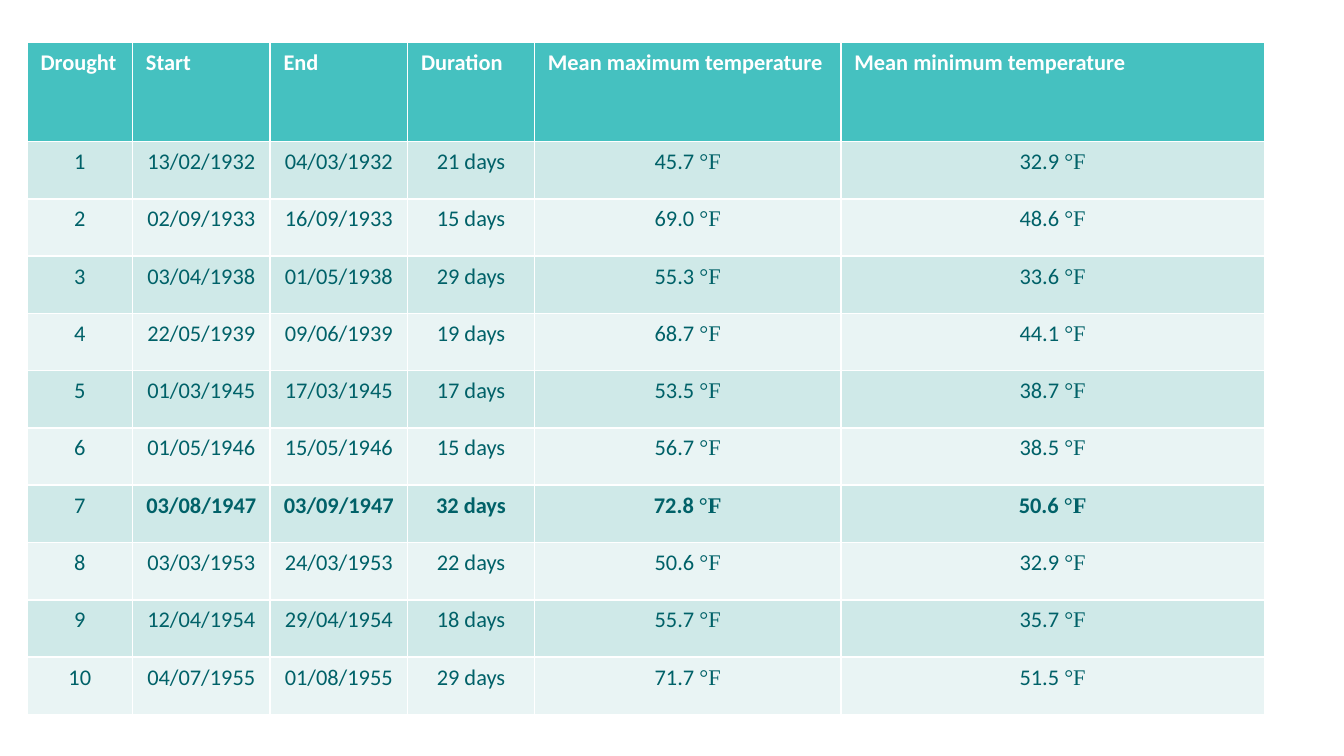
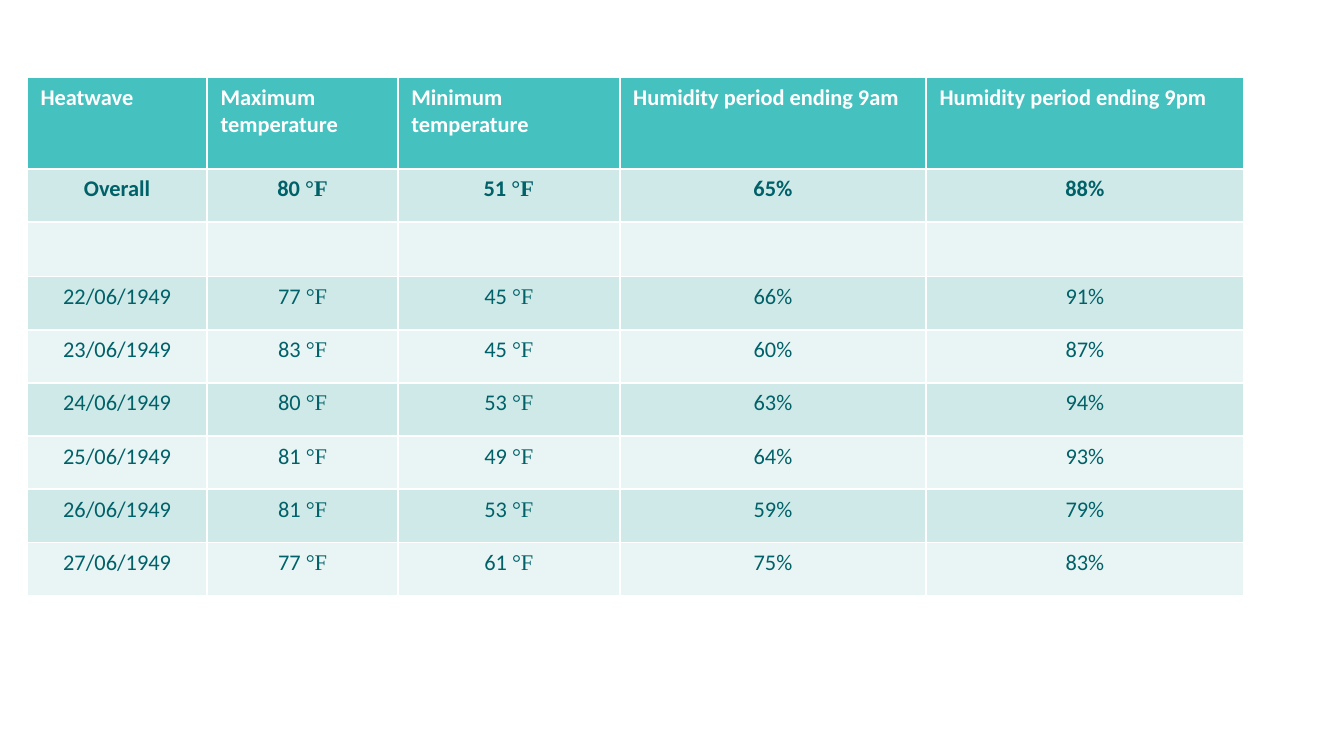
from dataclasses import dataclass

from pptx import Presentation
from pptx.dml.color import RGBColor as Color
from pptx.enum.text import PP_ALIGN as Align
from pptx.util import Pt


@dataclass(frozen=True)
class Theme:
    header: Color = Color.from_string("45C1C0")
    bands: tuple = (Color.from_string("CFE9E8"), Color.from_string("E9F4F4"))
    header_text: Color = Color.from_string("FFFFFF")
    body_text: Color = Color.from_string("006168")
    font: str = "Calibri"
    unit_font: str = "Times New Roman"
    size: int = 12


THEME = Theme()
PAGE_SIZE = (720, 405)
TABLE_LEFT = 14.5
UNIT = "°F"

DROUGHT_HEADS = ("Drought", "Start", "End", "Duration",
                 "Mean maximum temperature", "Mean minimum temperature")
DROUGHT_WIDTHS = (56.5, 73.7, 73.7, 68, 164.2, 226.8)
# start, end, days, mean maximum, mean minimum
DROUGHTS = (
    ("13/02/1932", "04/03/1932", 21, 45.7, 32.9),
    ("02/09/1933", "16/09/1933", 15, 69.0, 48.6),
    ("03/04/1938", "01/05/1938", 29, 55.3, 33.6),
    ("22/05/1939", "09/06/1939", 19, 68.7, 44.1),
    ("01/03/1945", "17/03/1945", 17, 53.5, 38.7),
    ("01/05/1946", "15/05/1946", 15, 56.7, 38.5),
    ("03/08/1947", "03/09/1947", 32, 72.8, 50.6),
    ("03/03/1953", "24/03/1953", 22, 50.6, 32.9),
    ("12/04/1954", "29/04/1954", 18, 55.7, 35.7),
    ("04/07/1955", "01/08/1955", 29, 71.7, 51.5),
)

HEATWAVE_HEADS = ("Heatwave", "Maximum temperature", "Minimum temperature",
                  "Humidity period ending 9am", "Humidity period ending 9pm")
HEATWAVE_WIDTHS = (96.5, 102.2, 118.8, 164.2, 170)
# label, maximum, minimum, humidity at 9am, humidity at 9pm
HEATWAVE_OVERALL = ("Overall", 80, 51, 65, 88)
HEATWAVE_DAYS = (
    ("22/06/1949", 77, 45, 66, 91),
    ("23/06/1949", 83, 45, 60, 87),
    ("24/06/1949", 80, 53, 63, 94),
    ("25/06/1949", 81, 49, 64, 93),
    ("26/06/1949", 81, 53, 59, 79),
    ("27/06/1949", 77, 61, 75, 83),
)


def drought_rows():
    return [(str(number), start, end, f"{days} days",
             f"{high:.1f} {UNIT}", f"{low:.1f} {UNIT}")
            for number, (start, end, days, high, low) in enumerate(DROUGHTS, 1)]


def heatwave_row(label, high, low, morning, evening):
    return (label, f"{high} {UNIT}", f"{low} {UNIT}",
            f"{morning}%", f"{evening}%")


def add_span(para, text, font, color, bold):
    span = para.add_run()
    span.text = text
    span.font.name = font
    span.font.size = Pt(THEME.size)
    span.font.color.rgb = color
    span.font.bold = bold


def fill_cell(cell, text, fill, color, bold, align=None):
    """Paint a cell and write its text, with the unit in its own font."""
    cell.fill.solid()
    cell.fill.fore_color.rgb = fill
    para = cell.text_frame.paragraphs[0]
    para.alignment = align
    value = text.removesuffix(UNIT)
    if value:
        add_span(para, value, THEME.font, color, bold)
    if value != text:
        add_span(para, UNIT, THEME.unit_font, color, bold)


def add_data_table(page, top, widths, heads, rows, header_height, row_height,
                   is_bold):
    """Add a banded table; is_bold(row, column) picks the bold body cells."""
    height = header_height + row_height * len(rows)
    table = page.shapes.add_table(len(rows) + 1, len(heads), Pt(TABLE_LEFT),
                                  Pt(top), Pt(sum(widths)), Pt(height)).table
    for column, width in zip(table.columns, widths):
        column.width = Pt(width)
    for row in table.rows:
        row.height = Pt(row_height)
    table.rows[0].height = Pt(header_height)

    for c, head in enumerate(heads):
        fill_cell(table.cell(0, c), head, THEME.header, THEME.header_text, True)
    for r, row in enumerate(rows):
        for c, text in enumerate(row):
            fill_cell(table.cell(r + 1, c), text, THEME.bands[r % 2],
                      THEME.body_text, is_bold(r, c), Align.CENTER)


def main():
    deck = Presentation()
    deck.slide_width, deck.slide_height = map(Pt, PAGE_SIZE)
    blank = deck.slide_layouts[6]

    longest = max(range(len(DROUGHTS)), key=lambda r: DROUGHTS[r][2])
    add_data_table(deck.slides.add_slide(blank), 22.8, DROUGHT_WIDTHS,
                   DROUGHT_HEADS, drought_rows(), 53, 30.7,
                   lambda r, c: r == longest and c > 0)

    heatwave_rows = [heatwave_row(*HEATWAVE_OVERALL),
                     ("",) * len(HEATWAVE_HEADS),
                     *(heatwave_row(*day) for day in HEATWAVE_DAYS)]
    add_data_table(deck.slides.add_slide(blank), 41.5, HEATWAVE_WIDTHS,
                   HEATWAVE_HEADS, heatwave_rows, 49, 28.5,
                   lambda r, c: r == 0)

    deck.save("out.pptx")


if __name__ == "__main__":
    main()
